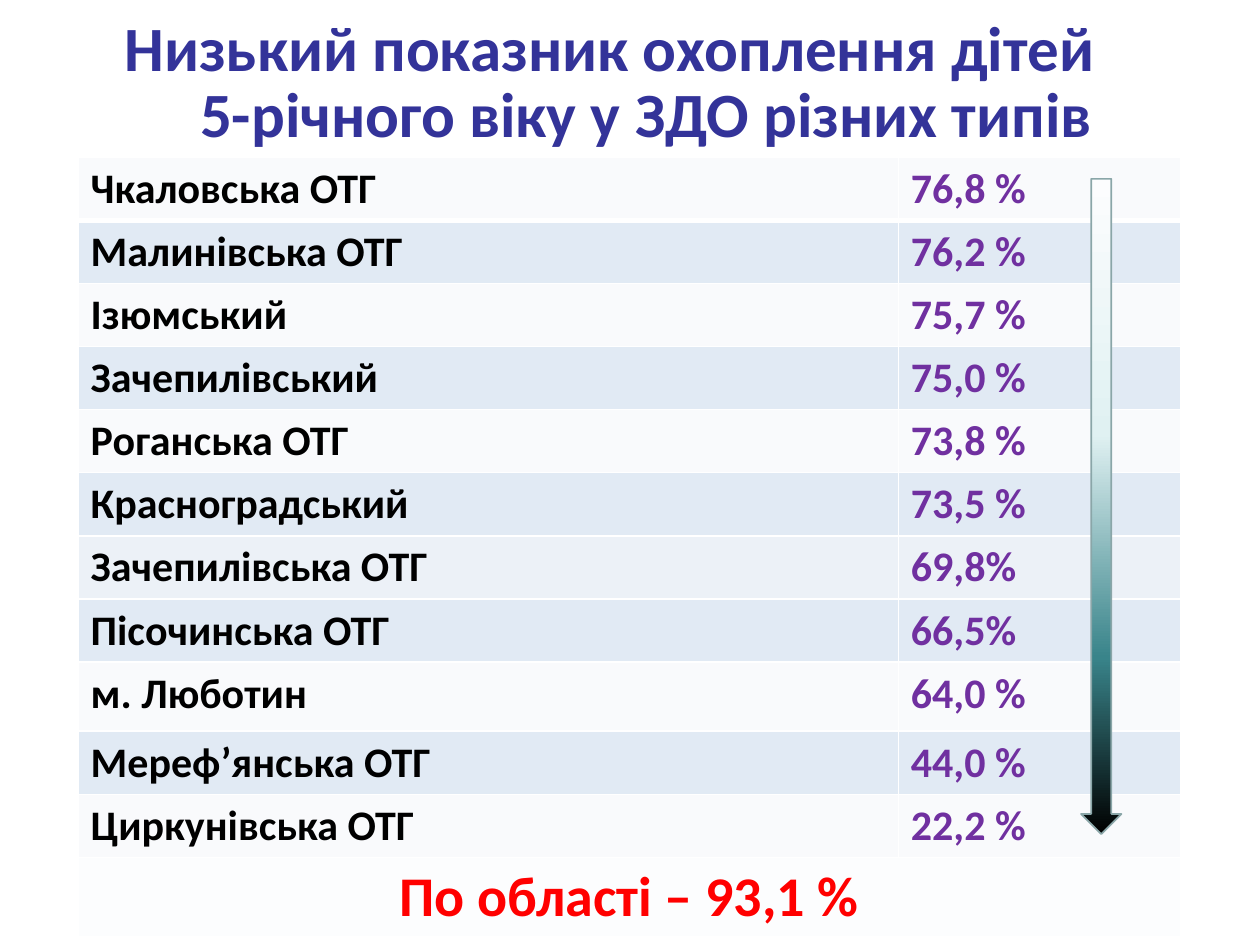
import pptx
import pptx.dml.color
import pptx.enum.shapes
import pptx.enum.text
import pptx.oxml
import pptx.oxml.ns
import pptx.util
from lxml import etree
from pptx.util import Inches

CENTER = pptx.enum.text.PP_ALIGN.CENTER
MIDDLE = pptx.enum.text.MSO_ANCHOR.MIDDLE
qn = pptx.oxml.ns.qn


def color(value):
    return pptx.dml.color.RGBColor.from_string(value)


def write(paragraph, text, size=24, font_color="000000", align=None):
    run = paragraph.add_run()
    run.text = text
    run.font.name = "Calibri"
    run.font.size = pptx.util.Pt(size)
    run.font.bold = True
    run.font.color.rgb = color(font_color)
    paragraph.alignment = align


presentation = pptx.Presentation()
presentation.slide_width = Inches(10)
presentation.slide_height = Inches(7.5)
slide = presentation.slides.add_slide(presentation.slide_layouts[6])

# Title: the second line is shifted to the right by its indent
title = slide.shapes.add_textbox(Inches(0.17), Inches(0.08), Inches(9.67), Inches(1.17))
frame = title.text_frame
frame.word_wrap = True
frame.vertical_anchor = MIDDLE
frame.margin_right = Inches(0.43)
title_lines = [("Низький показник охоплення дітей", 0), ("5-річного віку у ЗДО різних типів", 0.58)]
for index, (line, indent) in enumerate(title_lines):
    paragraph = frame.add_paragraph() if index else frame.paragraphs[0]
    paragraph.line_spacing = pptx.util.Pt(38)
    write(paragraph, line, size=36, font_color="333399", align=CENTER)
    paragraph._p.get_or_add_pPr().set("marL", str(Inches(indent)))

# Table of coverage by community
coverage = [
    ("Чкаловська ОТГ", "76,8 %"),
    ("Малинівська ОТГ", "76,2 %"),
    ("Ізюмський", "75,7 %"),
    ("Зачепилівський", "75,0 %"),
    ("Роганська ОТГ", "73,8 %"),
    ("Красноградський", "73,5 %"),
    ("Зачепилівська ОТГ", "69,8%"),
    ("Пісочинська ОТГ", "66,5%"),
    ("м. Люботин", "64,0 %"),
    ("Мереф’янська ОТГ", "44,0 %"),
    ("Циркунівська ОТГ", "22,2 %"),
]
total_row = len(coverage)
row_heights = [0.5] * 8 + [0.55] + [0.5] * 2 + [0.63]
table = slide.shapes.add_table(
    total_row + 1, 2, Inches(0.62), Inches(1.25), Inches(8.75), Inches(6.18)
).table
table.first_row = False
table.horz_banding = False
for column, width in zip(table.columns, (6.51, 2.24)):
    column.width = Inches(width)
for row, height in zip(table.rows, row_heights):
    row.height = Inches(height)

for row_index in range(total_row + 1):
    if row_index == total_row:
        fill_color, opacity = "8EB4E3", 2
    elif row_index % 2:
        fill_color, opacity = "B9CDE5", 42
    else:
        fill_color, opacity = ("B9CDE5" if row_index == 6 else "E9EDF4"), 27
    for column_index in range(2):
        cell = table.cell(row_index, column_index)
        properties = cell._tc.get_or_add_tcPr()
        for side in "LRTB":
            thick = (row_index, side) in ((0, "B"), (1, "T"))
            border = etree.SubElement(properties, qn("a:ln" + side), w=str(pptx.util.Pt(3 if thick else 1)))
            border_fill = etree.SubElement(border, qn("a:solidFill"))
            etree.SubElement(border_fill, qn("a:srgbClr"), val="FFFFFF")
        cell.fill.solid()
        cell.fill.fore_color.rgb = color(fill_color)
        fill_element = properties.find(qn("a:solidFill"))
        etree.SubElement(fill_element[0], qn("a:alpha"), val=str(opacity * 1000))
        if row_index < total_row:
            write(
                cell.text_frame.paragraphs[0],
                coverage[row_index][column_index],
                font_color=("000000", "7030A0")[column_index],
            )

total = table.cell(total_row, 0)
total.merge(table.cell(total_row, 1))
total.vertical_anchor = MIDDLE
write(total.text_frame.paragraphs[0], "По області – 93,1 %", size=32, font_color="FF0000", align=CENTER)

# Arrow showing the decline
arrow = slide.shapes.add_shape(
    pptx.enum.shapes.MSO_SHAPE.DOWN_ARROW, Inches(8.58), Inches(1.42), Inches(0.32), Inches(5.2)
)
arrow.shadow.inherit = False
arrow.line.color.rgb = color("8AA6A8")
arrow.line.width = pptx.util.Pt(1)
arrow.fill.gradient()
arrow.fill.gradient_angle = 270
stops = arrow._element.spPr.find(qn("a:gradFill")).find(qn("a:gsLst"))
for stop in list(stops):
    stops.remove(stop)
for position, stop_color in ((0, "FCFDFE"), (39, "E0F1F2"), (73, "39848A"), (100, "000000")):
    stop = etree.SubElement(stops, qn("a:gs"), pos=str(position * 1000))
    etree.SubElement(stop, qn("a:srgbClr"), val=stop_color)

presentation.save("out.pptx")
